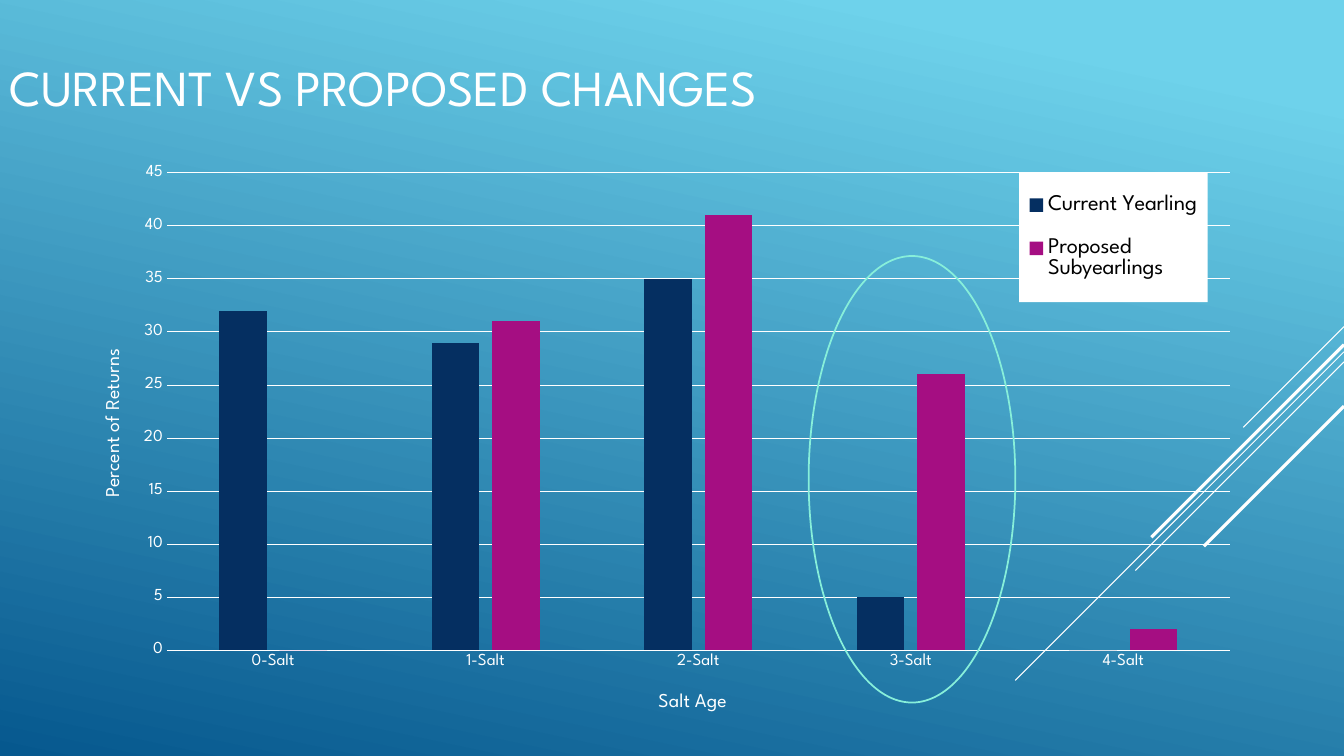
import pptx
import pptx.chart.data
import pptx.dml.color
import pptx.enum.chart
import pptx.enum.shapes
import pptx.enum.text
import pptx.oxml
import pptx.oxml.ns
import pptx.util

Inches = pptx.util.Inches
Pt = pptx.util.Pt
qn = pptx.oxml.ns.qn
NAMESPACES = pptx.oxml.ns.nsdecls("c", "a")

FONT = "League Spartan"
WHITE, BLACK = "FFFFFF", "000000"
SKY, DEEP_BLUE = "6ED2EB", "06588E"
NAVY, MAGENTA, MINT = "052F61", "A50E82", "87EFDA"


def color(value):
    return pptx.dml.color.RGBColor.from_string(value)


def format_font(font, size, fill=WHITE):
    font.name = FONT
    font.size = Pt(size)
    font.bold = False
    font.color.rgb = color(fill)


def write_text(frame, text, size=12, fill=WHITE):
    paragraph = frame.paragraphs[0]
    run = paragraph.add_run()
    run.text = text
    format_font(run.font, size, fill)


def format_line(line, fill, width):
    line.color.rgb = color(fill)
    line.width = Pt(width)


def chart_area_fill(fill=None):
    """Return shape properties for a chart part; no fill by default."""
    paint = f'<a:solidFill><a:srgbClr val="{fill}"/></a:solidFill>' if fill else "<a:noFill/>"
    return pptx.oxml.parse_xml(
        f"<c:spPr {NAMESPACES}>{paint}<a:ln><a:noFill/></a:ln></c:spPr>")


def set_layout(element, index_of, x, y, width=None, height=None, inner=False):
    """Place a chart part by fractions of the chart's area."""
    for old in element.findall(qn("c:layout")):
        element.remove(old)
    parts = '<c:layoutTarget val="inner"/>' if inner else ""
    parts += '<c:xMode val="edge"/><c:yMode val="edge"/>'
    for name, value in zip("xywh", (x, y, width, height)):
        if value is not None:
            parts += f'<c:{name} val="{value}"/>'
    layout = pptx.oxml.parse_xml(
        f"<c:layout {NAMESPACES}><c:manualLayout>{parts}</c:manualLayout></c:layout>")
    element.insert(index_of(element), layout)


def before_overlay(element):
    return element.index(element.find(qn("c:overlay")))


class SlideBuilder:
    def __init__(self, presentation):
        self.slide = presentation.slides.add_slide(presentation.slide_layouts[6])
        self.shapes = self.slide.shapes

    def background(self, start, end, angle):
        fill = self.slide.background.fill
        fill.gradient()
        fill.gradient_angle = 360 - angle
        for stop, value, position in zip(fill.gradient_stops, (start, end), (0.1, 1)):
            stop.color.rgb = color(value)
            stop.position = position

    def line(self, x1, y1, x2, y2, width):
        connector = self.shapes.add_connector(
            pptx.enum.shapes.MSO_CONNECTOR.STRAIGHT,
            Inches(x1), Inches(y1), Inches(x2), Inches(y2))
        format_line(connector.line, WHITE, width)
        connector._element.spPr.append(
            pptx.oxml.parse_xml(f"<a:effectLst {NAMESPACES}/>"))

    def ellipse(self, left, top, width, height):
        shape = self.shapes.add_shape(
            pptx.enum.shapes.MSO_SHAPE.OVAL,
            Inches(left), Inches(top), Inches(width), Inches(height))
        shape.shadow.inherit = False
        shape.fill.background()
        format_line(shape.line, MINT, 1.25)

    def title(self, text, left, top, width, height):
        box = self.shapes.add_textbox(
            Inches(left), Inches(top), Inches(width), Inches(height))
        box.text_frame.word_wrap = True
        box.text_frame.vertical_anchor = pptx.enum.text.MSO_ANCHOR.MIDDLE
        write_text(box.text_frame, text, size=36)

    def column_chart(self, categories, series, left, top, width, height):
        data = pptx.chart.data.CategoryChartData()
        data.categories = categories
        for name, values, _ in series:
            data.add_series(name, values)
        chart = self.shapes.add_chart(
            pptx.enum.chart.XL_CHART_TYPE.COLUMN_CLUSTERED,
            Inches(left), Inches(top), Inches(width), Inches(height), data).chart
        format_font(chart.font, 10)
        chart.has_title = False

        plot = chart.plots[0]
        plot.gap_width, plot.overlap = 219, -27
        plot.vary_by_categories = False
        for columns, (_, _, fill) in zip(plot.series, series):
            columns.format.fill.solid()
            columns.format.fill.fore_color.rgb = color(fill)
            columns.invert_if_negative = False

        # Clear areas and a fixed plot
        chart_space = chart._chartSpace
        chart_element = chart_space.find(qn("c:chart"))
        chart_element.addnext(chart_area_fill())
        plot_area = chart_element.find(qn("c:plotArea"))
        plot_area.append(chart_area_fill())
        set_layout(plot_area, lambda _: 0, 0.078, 0.019, 0.919, 0.779, inner=True)
        return chart

    def axis(self, axis, title, x, y):
        axis.major_tick_mark = axis.minor_tick_mark = pptx.enum.chart.XL_TICK_MARK.NONE
        format_font(axis.tick_labels.font, 12)
        write_text(axis.axis_title.text_frame, title, size=14)
        set_layout(axis.axis_title._element, before_overlay, x, y)

    def legend(self, chart, x, y, width, height):
        chart.has_legend = True
        legend = chart.legend
        legend.position = pptx.enum.chart.XL_LEGEND_POSITION.BOTTOM
        legend.include_in_layout = False
        format_font(legend.font, 16, BLACK)
        element = legend._element
        set_layout(element, before_overlay, x, y, width, height)
        element.find(qn("c:overlay")).addnext(chart_area_fill(WHITE))


def main():
    presentation = pptx.Presentation()
    presentation.slide_width = Inches(13.33)
    presentation.slide_height = Inches(7.5)
    builder = SlideBuilder(presentation)
    builder.background(SKY, DEEP_BLUE, angle=102)

    # Diagonal lines running in from the right edge at 45 degrees
    for start_y, run, width in ((3.24, 1, 0.75), (3.49, 3.26, 0.75), (3.59, 2.07, 0.75),
                                (3.42, 1.91, 2.25), (4.03, 1.39, 2.25)):
        builder.line(13.33, start_y, 13.33 - run, start_y + run, width)

    # Returns by salt age
    chart = builder.column_chart(
        [f"{age}-Salt" for age in range(5)],
        [("Current Yearling", (32, 29, 35, 5, 0), NAVY),
         ("Proposed Subyearlings", (0, 31, 41, 26, 2), MAGENTA)],
        0.76, 1.6, 11.47, 6.08)
    builder.axis(chart.category_axis, "Salt Age", 0.5, 0.86)
    format_line(chart.category_axis.format.line, WHITE, 0.75)
    value_axis = chart.value_axis
    builder.axis(value_axis, "Percent of Returns", 0.02, 0.3)
    value_axis.minimum_scale, value_axis.maximum_scale = 0, 45
    value_axis.major_unit = 5
    value_axis.format.line.fill.background()
    format_line(value_axis.major_gridlines.format.line, WHITE, 0.75)
    builder.legend(chart, 0.815, 0.018, 0.163, 0.212)

    # Highlight and heading
    builder.ellipse(8.02, 2.54, 2.05, 4.43)
    builder.title("CURRENT VS PROPOSED CHANGES", 0, 0, 13.33, 1.71)

    presentation.save("out.pptx")


if __name__ == "__main__":
    main()
